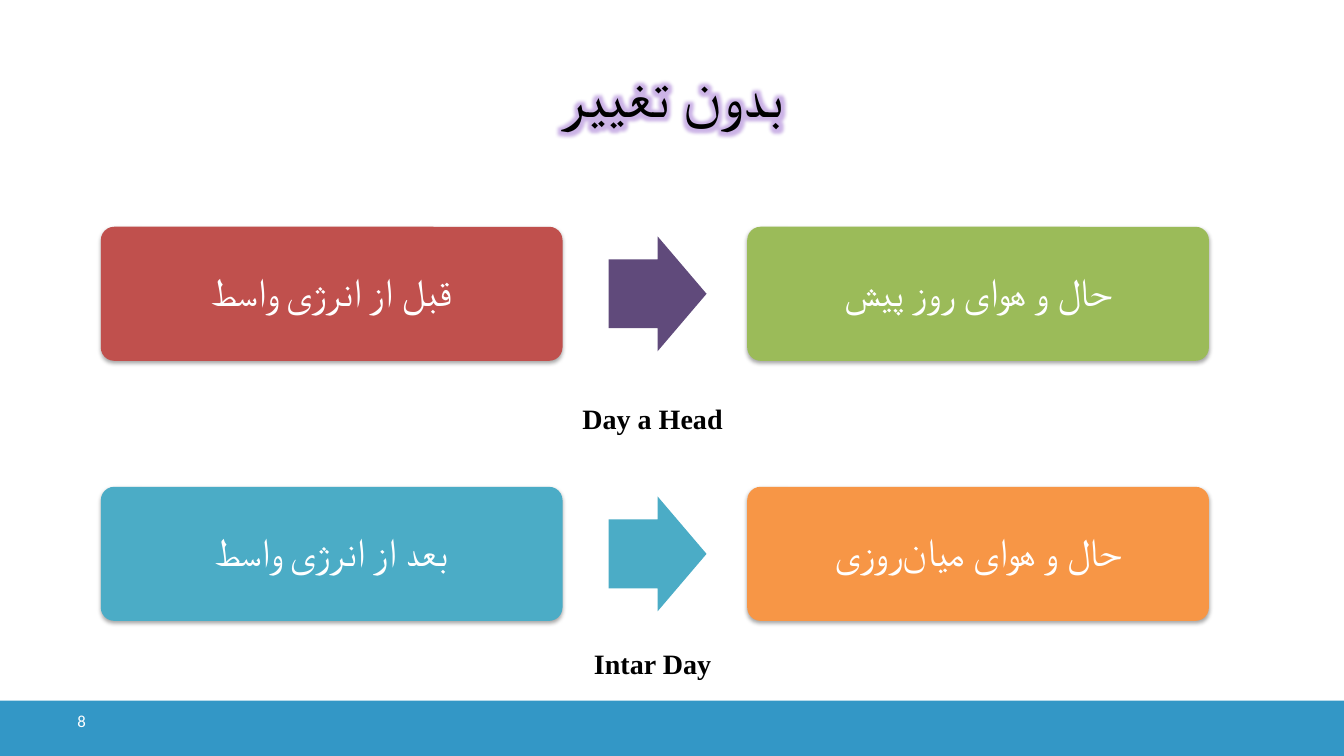
from dataclasses import dataclass

from lxml import etree
from pptx import Presentation
from pptx.dml.color import RGBColor
from pptx.enum.shapes import MSO_SHAPE
from pptx.enum.text import MSO_ANCHOR, MSO_AUTO_SIZE, PP_ALIGN
from pptx.oxml.ns import qn
from pptx.util import Inches, Pt

RECTANGLE = MSO_SHAPE.RECTANGLE
ROUNDED = MSO_SHAPE.ROUNDED_RECTANGLE
ARROW = MSO_SHAPE.RIGHT_ARROW
CENTER, LEFT = PP_ALIGN.CENTER, PP_ALIGN.LEFT
MIDDLE, TOP = MSO_ANCHOR.MIDDLE, MSO_ANCHOR.TOP
GROW = MSO_AUTO_SIZE.SHAPE_TO_FIT_TEXT
TITLE_ONLY = 5
NON_JOINER = chr(0x200C)


@dataclass(frozen=True)
class Theme:
    font: str = "Calibri"
    label_font: str = "Times New Roman"
    ink: str = "000000"
    light: str = "FFFFFF"
    footer: str = "3397C6"
    red: str = "C0504D"
    green: str = "9BBB59"
    purple: str = "604A7B"
    teal: str = "4BACC6"
    orange: str = "F79646"
    glow: str = "7F42C1"
    title_size: int = 44
    card_size: int = 28
    label_size: int = 20
    number_size: int = 12


@dataclass(frozen=True)
class Area:
    left: float
    top: float
    width: float
    height: float

    def lengths(self) -> tuple:
        return tuple(Inches(value) for value in
                     (self.left, self.top, self.width, self.height))


@dataclass(frozen=True)
class Grid:
    left: float = 1
    width: float = 10.99
    columns: int = 24
    row: float = 0.19

    def area(self, top: float, column: float, row: float,
             columns: float, rows: float) -> Area:
        unit = self.width / self.columns
        return Area(self.left + column * unit, top + row * self.row,
                    columns * unit, rows * self.row)


@dataclass(frozen=True)
class Style:
    size: int
    color: str
    font: str
    bold: bool = False
    rtl: bool = True
    align: PP_ALIGN = CENTER
    spacing: float = 1.0


@dataclass(frozen=True)
class Stage:
    top: float
    source: str
    source_color: str
    arrow_color: str
    target: str
    target_color: str
    label: str
    label_row: float


THEME = Theme()
GRID = Grid()
TITLE_STYLE = Style(THEME.title_size, THEME.ink, THEME.font)
CARD_STYLE = Style(THEME.card_size, THEME.light, THEME.font, spacing=0.9)
LABEL_STYLE = Style(THEME.label_size, THEME.ink, THEME.label_font,
                    bold=True, rtl=False, spacing=1.5)
NUMBER_STYLE = Style(THEME.number_size, THEME.light, THEME.font, align=LEFT)

STAGES = (
    Stage(2.25, "قبل از انرژی واسط", THEME.red, THEME.purple,
          "حال و هوای روز پیش", THEME.green, "Day a Head", 8),
    Stage(4.83, "بعد از انرژی واسط", THEME.teal, THEME.teal,
          NON_JOINER.join(("حال و هوای میان", "روزی")), THEME.orange,
          "Intar Day", 7.2),
)


def add_color(parent, color: str, alpha: int) -> None:
    node = etree.SubElement(parent, qn("a:srgbClr"), val=color)
    etree.SubElement(node, qn("a:alpha"), val=str(alpha * 1000))


def write(frame, text: str, style: Style, anchor: MSO_ANCHOR = MIDDLE):
    frame.vertical_anchor = anchor
    para = frame.paragraphs[0]
    para.alignment = style.align
    para.line_spacing = style.spacing
    if style.rtl:
        para._p.get_or_add_pPr().set("rtl", "1")
    span = para.add_run()
    span.text = text
    span.font.size = Pt(style.size)
    span.font.bold = style.bold
    span.font.color.rgb = RGBColor.from_string(style.color)
    span.font.name = style.font
    properties = span._r.get_or_add_rPr()
    etree.SubElement(properties, qn("a:cs"), typeface=style.font)
    return span


def add_glow(span, color: str) -> None:
    effects = etree.Element(qn("a:effectLst"))
    glow = etree.SubElement(effects, qn("a:glow"), rad=str(Pt(11)))
    add_color(glow, color, 40)
    span._r.get_or_add_rPr().find(qn("a:solidFill")).addnext(effects)


def add_block(shapes, kind: MSO_SHAPE, area: Area, color: str):
    block = shapes.add_shape(kind, *area.lengths())
    block.fill.solid()
    block.fill.fore_color.rgb = RGBColor.from_string(color)
    block.line.fill.background()
    block.shadow.inherit = False
    return block


def add_card(shapes, area: Area, color: str, text: str) -> None:
    card = add_block(shapes, ROUNDED, area, color)
    card.adjustments[0] = 0.1
    effects = card._element.spPr.find(qn("a:effectLst"))
    shadow = etree.SubElement(effects, qn("a:outerShdw"), blurRad="40000",
                              dist="23000", dir="5400000", rotWithShape="0")
    add_color(shadow, "000000", 35)
    frame = card.text_frame
    frame.word_wrap = True
    write(frame, text, CARD_STYLE)


def add_stage(page, stage: Stage) -> None:
    shapes = page.shapes.add_group_shape().shapes
    add_card(shapes, GRID.area(stage.top, 0, 0, 10, 7),
             stage.source_color, stage.source)
    arrow = add_block(shapes, ARROW, GRID.area(stage.top, 11, 0.5, 2.12, 6),
                      stage.arrow_color)
    arrow.adjustments[0] = 0.6
    arrow.adjustments[1] = 0.5
    add_card(shapes, GRID.area(stage.top, 14, 0, 10, 7),
             stage.target_color, stage.target)
    area = GRID.area(stage.top, 10.2, stage.label_row, 3.5, 3.2)
    label = page.shapes.add_textbox(*area.lengths()).text_frame
    label.word_wrap = False
    label.auto_size = GROW
    write(label, stage.label, LABEL_STYLE, TOP)


def main() -> None:
    deck = Presentation()
    deck.slide_width, deck.slide_height = Inches(13.33), Inches(7.5)
    page = deck.slides.add_slide(deck.slide_layouts[TITLE_ONLY])

    add_block(page.shapes, RECTANGLE, Area(0, 6.95, 13.33, 0.55), THEME.footer)
    number = page.shapes.add_textbox(*Area(0.67, 6.95, 3.11, 0.4).lengths())
    number.text_frame.word_wrap = True
    write(number.text_frame, "8", NUMBER_STYLE)

    for stage in STAGES:
        add_stage(page, stage)

    title = page.shapes.title
    title.left, title.top, title.width, title.height = Area(
        0.67, 0.3, 12, 1.25).lengths()
    add_glow(write(title.text_frame, "بدون تغییر", TITLE_STYLE), THEME.glow)

    deck.save("out.pptx")


if __name__ == "__main__":
    main()
